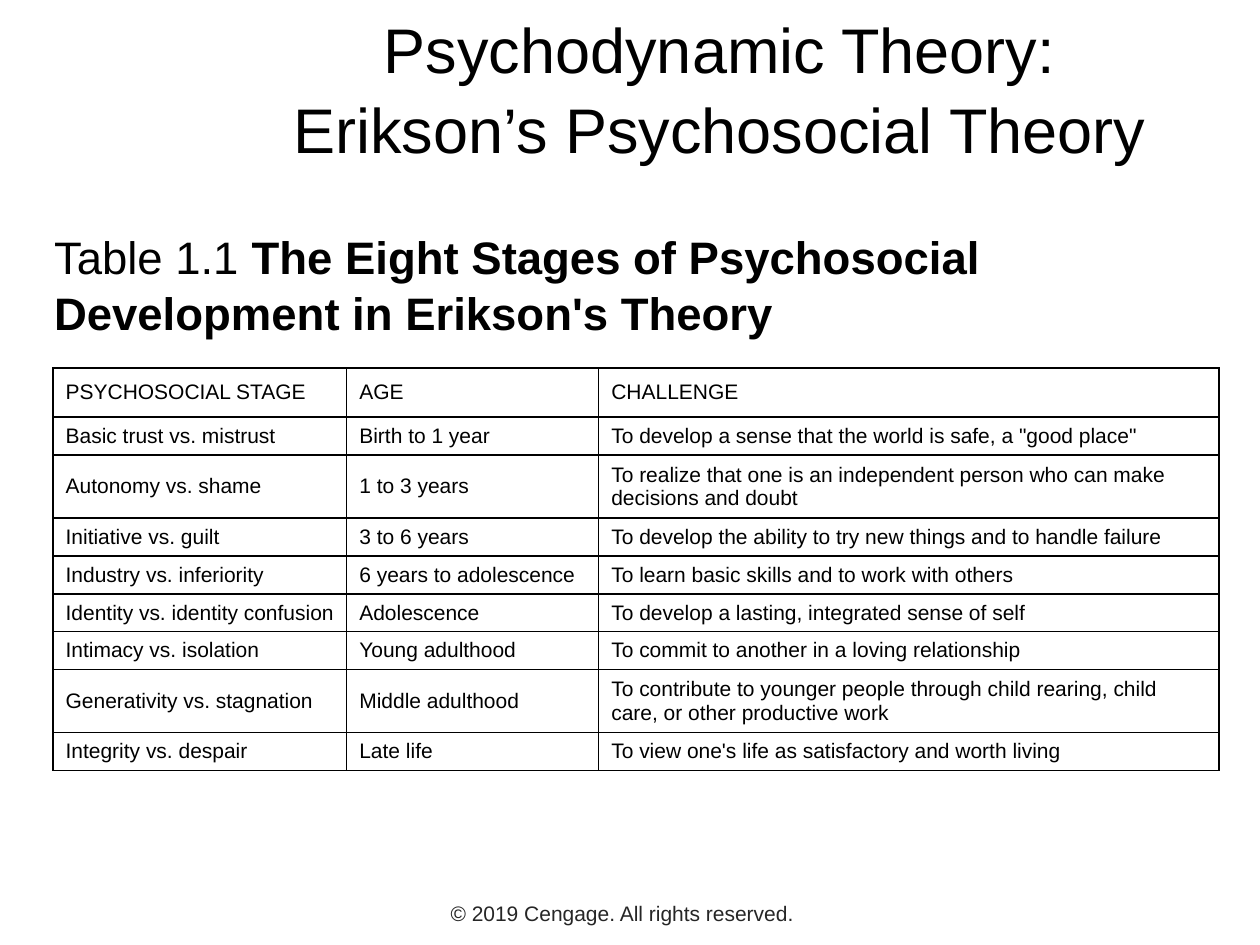
"""Build a slide with a table of Erikson's eight psychosocial stages."""
from dataclasses import dataclass

from lxml.etree import SubElement
from pptx import Presentation
from pptx.dml.color import RGBColor as Rgb
from pptx.enum.text import MSO_ANCHOR as Anchor, PP_ALIGN as Align
from pptx.oxml.ns import qn
from pptx.util import Cm, Pt


@dataclass(frozen=True)
class Theme:
    font: str = "Arial"
    ink: str = "000000"
    gray: str = "262626"
    paper: str = "FFFFFF"
    title: int = 36
    lead: int = 26
    small: int = 12


theme = Theme()


def style(para, size, color=theme.ink):
    for run in para.runs:
        run.font.name = theme.font
        run.font.size = Pt(size)
        run.font.color.rgb = Rgb.from_string(color)


def add_text(left, top, width, height, text, size, color=theme.ink):
    box = slide.shapes.add_textbox(Cm(left), Cm(top), Cm(width), Cm(height))
    frame = box.text_frame
    frame.word_wrap = True
    frame.text = text
    style(frame.paragraphs[0], size, color)
    return frame


deck = Presentation()
deck.slide_width, deck.slide_height = Cm(25.4), Cm(19.05)
slide = deck.slides.add_slide(deck.slide_layouts[6])

foot = add_text(3.53, 18.03, 18.03, 0.76, "© 2019 Cengage. All rights reserved.", theme.small, theme.gray)
foot.paragraphs[0].alignment = Align.CENTER

title = add_text(4.88, 0.64, 19.25, 2.21, "Psychodynamic Theory:\vErikson’s Psychosocial Theory", theme.title)
title.vertical_anchor = Anchor.MIDDLE
title.paragraphs[0].alignment = Align.CENTER
title.paragraphs[0].line_spacing = 1.05

lead = add_text(0.84, 4.45, 23.29, 2.54, "Table 1.1 ", theme.lead).paragraphs[0]
name = lead.add_run()
name.text = "The Eight Stages of Psychosocial Development in Erikson's Theory"
name.font.bold = True
lead.line_spacing = 1.03
style(lead, theme.lead)

stages = [
    ("PSYCHOSOCIAL STAGE", "AGE", "CHALLENGE"),
    ("Basic trust vs. mistrust", "Birth to 1 year", 'To develop a sense that the world is safe, a "good place"'),
    ("Autonomy vs. shame", "1 to 3 years",
     "To realize that one is an independent person who can make decisions and doubt"),
    ("Initiative vs. guilt", "3 to 6 years", "To develop the ability to try new things and to handle failure"),
    ("Industry vs. inferiority", "6 years to adolescence", "To learn basic skills and to work with others"),
    ("Identity vs. identity confusion", "Adolescence", "To develop a lasting, integrated sense of self"),
    ("Intimacy vs. isolation", "Young adulthood", "To commit to another in a loving relationship"),
    ("Generativity vs. stagnation", "Middle adulthood",
     "To contribute to younger people through child rearing, child care, or other productive work"),
    ("Integrity vs. despair", "Late life", "To view one's life as satisfactory and worth living"),
]
widths = [5.92, 5.08, 12.5]
one, two = 0.73, 1.2
heights = [0.99, one, two, one, one, one, one, two, 0.77]

table = slide.shapes.add_table(
    len(stages), len(widths), Cm(1.07), Cm(7.42), Cm(sum(widths)), Cm(sum(heights))).table
table.first_row = table.horz_banding = False
for col, width in zip(table.columns, widths):
    col.width = Cm(width)
for row, height, words in zip(table.rows, heights, stages):
    row.height = Cm(height)
    for cell, text in zip(row.cells, words):
        cell.text_frame.text = text
        cell.vertical_anchor = Anchor.MIDDLE
        style(cell.text_frame.paragraphs[0], theme.small)
        props = cell._tc.get_or_add_tcPr()
        for side in ("a:lnL", "a:lnR", "a:lnT", "a:lnB"):
            line = SubElement(props, qn(side), w=str(Pt(1)))
            fill = SubElement(line, qn("a:solidFill"))
            SubElement(fill, qn("a:srgbClr"), val=theme.ink)
        cell.fill.solid()
        cell.fill.fore_color.rgb = Rgb.from_string(theme.paper)

deck.save("out.pptx")
